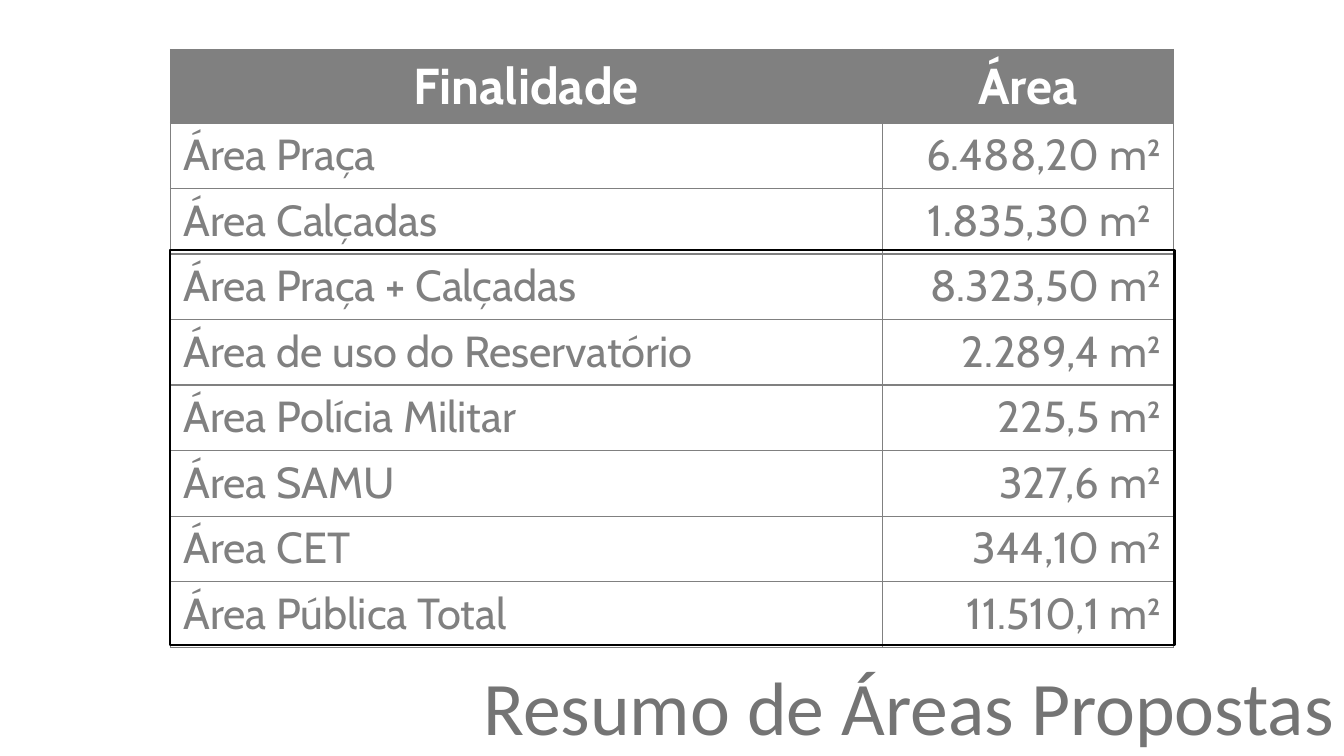
import pptx
import pptx.dml.color
import pptx.enum.shapes
import pptx.enum.text
import pptx.oxml
import pptx.oxml.ns
import pptx.util

Inches = pptx.util.Inches
Pt = pptx.util.Pt
ALIGN = pptx.enum.text.PP_ALIGN
MIDDLE = pptx.enum.text.MSO_ANCHOR.MIDDLE

COLORS = {
    "white": "FFFFFF",
    "gray": "808080",
    "title": "747474",
    "outline": "000000",
}

HEADER = ("Finalidade", "Área")
AREAS = [
    ("Área Praça", "6.488,20 m²"),
    ("Área Calçadas", "1.835,30 m² "),
    ("Área Praça + Calçadas", "8.323,50 m²"),
    ("Área de uso do Reservatório", "2.289,4 m²"),
    ("Área Polícia Militar", "225,5 m²"),
    ("Área SAMU", "327,6 m²"),
    ("Área CET", "344,10 m²"),
    ("Área Pública Total", "11.510,1 m²"),
]
COLUMN_WIDTHS = (7.06, 2.89)
HEADER_HEIGHT = 0.73
ROW_HEIGHT = 0.65

HEADER_FONT = {"name": "Cabin", "size": Pt(36), "bold": True}
BODY_FONT = {"name": "Cabin", "size": Pt(31), "bold": False}
TITLE_FONT = {"name": "Calibri", "size": Pt(54)}
CELL_FORMAT = {
    "margin_left": Inches(0.13),
    "margin_right": Inches(0.13),
    "margin_top": Inches(0.06),
    "margin_bottom": Inches(0.06),
}


def rgb(color):
    return pptx.dml.color.RGBColor.from_string(COLORS[color])


def apply_format(target, values):
    for name, value in values.items():
        setattr(target, name, value)


def write_text(paragraph, text, font, color, alignment):
    paragraph.alignment = alignment
    run = paragraph.add_run()
    run.text = text
    apply_format(run.font, font)
    run.font.color.rgb = rgb(color)


def add_borders(cell, color, width):
    properties = cell._tc.get_or_add_tcPr()
    # Border lines must come before the cell fill
    for position, side in enumerate(("lnL", "lnR", "lnT", "lnB")):
        line = pptx.oxml.parse_xml(
            f'<a:{side} {pptx.oxml.ns.nsdecls("a")} w="{Pt(width)}">'
            f'<a:solidFill><a:srgbClr val="{COLORS[color]}"/></a:solidFill>'
            f'</a:{side}>'
        )
        properties.insert(position, line)


def fill_cell(cell, text, font, color, alignment, fill=None):
    apply_format(cell, CELL_FORMAT)
    if fill:
        cell.fill.solid()
        cell.fill.fore_color.rgb = rgb(fill)
    else:
        cell.fill.background()
    add_borders(cell, "gray", 1)
    write_text(cell.text_frame.paragraphs[0], text, font, color, alignment)


def add_area_table(slide):
    height = HEADER_HEIGHT + ROW_HEIGHT * len(AREAS)
    table = slide.shapes.add_table(
        len(AREAS) + 1, len(HEADER), Inches(1.69), Inches(0.49),
        Inches(sum(COLUMN_WIDTHS)), Inches(height),
    ).table
    apply_format(table, {"first_row": False, "horz_banding": False})
    for column, width in zip(table.columns, COLUMN_WIDTHS):
        column.width = Inches(width)
    for row in table.rows:
        row.height = Inches(ROW_HEIGHT)
    table.rows[0].height = Inches(HEADER_HEIGHT)

    for column, text in enumerate(HEADER):
        fill_cell(table.cell(0, column), text, HEADER_FONT, "white", ALIGN.CENTER, "gray")
    for row, (purpose, area) in enumerate(AREAS, start=1):
        fill_cell(table.cell(row, 0), purpose, BODY_FONT, "gray", ALIGN.LEFT)
        fill_cell(table.cell(row, 1), area, BODY_FONT, "gray", ALIGN.RIGHT)


def add_outline(slide, left, top, width, height):
    shape = slide.shapes.add_shape(
        pptx.enum.shapes.MSO_SHAPE.RECTANGLE,
        Inches(left), Inches(top), Inches(width), Inches(height),
    )
    shape.shadow.inherit = False
    shape.fill.background()
    shape.line.color.rgb = rgb("outline")
    shape.line.width = Pt(1.5)


def add_title(slide, text, left, top, width, height):
    shape = slide.shapes.add_textbox(Inches(left), Inches(top), Inches(width), Inches(height))
    apply_format(shape.text_frame, {"word_wrap": True, "vertical_anchor": MIDDLE})
    paragraph = shape.text_frame.paragraphs[0]
    paragraph.line_spacing = 0.9
    write_text(paragraph, text, TITLE_FONT, "title", ALIGN.RIGHT)


def main():
    presentation = pptx.Presentation()
    presentation.slide_width = Inches(13.33)
    presentation.slide_height = Inches(7.5)
    slide = presentation.slides.add_slide(presentation.slide_layouts[6])

    # Title below the table
    add_title(slide, "Resumo de Áreas Propostas", 2.25, 6.61, 11.08, 0.89)

    # Areas, with a frame around the summary rows
    add_area_table(slide)
    add_outline(slide, 1.69, 2.48, 9.96, 3.92)

    presentation.save("out.pptx")


if __name__ == "__main__":
    main()
